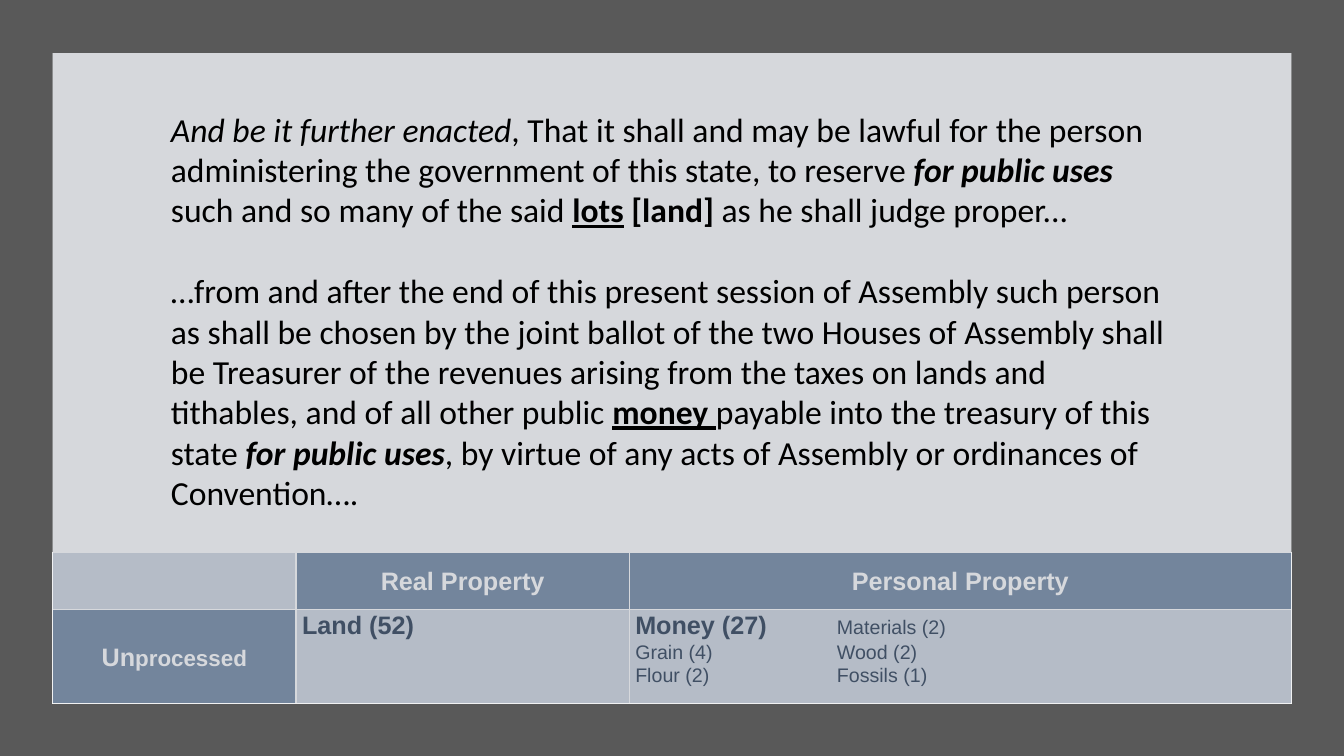
"""Build a slide with two quoted statutes above a table of property types."""
from lxml import etree
from pptx import Presentation
from pptx.dml.color import RGBColor
from pptx.enum.shapes import MSO_SHAPE
from pptx.enum.text import MSO_ANCHOR, MSO_AUTO_SIZE, PP_ALIGN
from pptx.oxml import parse_xml
from pptx.oxml.ns import qn
from pptx.util import Pt

RECTANGLE = MSO_SHAPE.RECTANGLE
MIDDLE, TOP = MSO_ANCHOR.MIDDLE, MSO_ANCHOR.TOP
CENTER, LEFT = PP_ALIGN.CENTER, PP_ALIGN.LEFT
FIT_SHAPE = MSO_AUTO_SIZE.SHAPE_TO_FIT_TEXT

NAMESPACE = "http://schemas.openxmlformats.org/drawingml/2006/main"
WHITE, GRAY, BLUE, PALE, NAVY = "FFFFFF", "595959", "8497B0", "D6DCE5", "44546A"
PANEL = (37.5, 38, 885, 464.5)


def paint(fill, color):
    fill.solid()
    fill.fore_color.rgb = RGBColor.from_string(color)


def add_span(para, text, size=24, font="Calibri", color="000000",
             bold=False, italic=False, underline=False):
    span = para.add_run()
    span.text = text
    span.font.size = Pt(size)
    span.font.name = font
    span.font.bold = bold
    span.font.italic = italic
    span.font.underline = underline
    span.font.color.rgb = RGBColor.from_string(color)


deck = Presentation()
deck.slide_width, deck.slide_height = Pt(960), Pt(540)
page = deck.slides.add_slide(deck.slide_layouts[6])
paint(page.background.fill, "F2F2F2")

for bounds, color in (((0, 0, 960, 540), GRAY), (PANEL, WHITE)):
    box = page.shapes.add_shape(RECTANGLE, *map(Pt, bounds))
    box.shadow.inherit = False
    box.line.fill.background()
    paint(box.fill, color)

column_widths, row_heights = (174, 238, 473), (41, 67)
frame = page.shapes.add_table(2, 3, Pt(37.5), Pt(394.5), Pt(885), Pt(108))
table = frame.table
for column, width in zip(table.columns, column_widths):
    column.width = Pt(width)
for row, height in zip(table.rows, row_heights):
    row.height = Pt(height)

header = {"size": 18, "font": "Arial", "color": WHITE, "bold": True}
leading = {**header, "color": NAVY}
minor = {**leading, "size": 14, "bold": False}
cells = [
    [[],
     [[("Real Property", header)]],
     [[("Personal Property", header)]]],
    [[[("Un", header), ("processed", {**header, "size": 16})]],
     [[("Land (52)", leading)]],
     [[("Money (27)", leading), ("\tMaterials (2)", minor)],
      [("Grain (4)\tWood (2)", minor)],
      [("Flour (2)\tFossils (1)", minor)]]],
]
for row_index, row in enumerate(cells):
    for column_index, lines in enumerate(row):
        cell = table.cell(row_index, column_index)
        is_header = (row_index == 0) != (column_index == 0)
        paint(cell.fill, BLUE if is_header else PALE)
        cell.vertical_anchor = MIDDLE if is_header else TOP
        cell.margin_left = cell.margin_right = Pt(4.3)
        cell.margin_top = cell.margin_bottom = 0
        for position, side in enumerate(("lnL", "lnR", "lnT", "lnB")):
            border = parse_xml(
                f'<a:{side} xmlns:a="{NAMESPACE}" w="{Pt(1)}"><a:solidFill>'
                f'<a:srgbClr val="{WHITE}"/></a:solidFill></a:{side}>')
            cell.fill._xPr.insert(position, border)
        for line_index, spans in enumerate(lines):
            frame = cell.text_frame
            para = frame.add_paragraph() if line_index else frame.paragraphs[0]
            para.alignment = CENTER if is_header else LEFT
            para.line_spacing = 1.07
            for text, style in spans:
                add_span(para, text, **style)
            if len(lines) > 1:
                tabs = etree.SubElement(para._p.get_or_add_pPr(), qn("a:tabLst"))
                etree.SubElement(tabs, qn("a:tab"), pos=str(Pt(144)), algn="l")

veil = page.shapes.add_shape(RECTANGLE, *map(Pt, PANEL))
veil.shadow.inherit = False
veil.line.fill.background()
paint(veil.fill, "333F50")
veil_color = veil.fill._xPr.find(qn("a:solidFill"))[0]
etree.SubElement(veil_color, qn("a:alpha"), val="20000")

strong = {"bold": True, "italic": True}
key_word = {"bold": True, "underline": True}
statutes = [
    [("And be it further enacted", {"italic": True}),
     (", That it shall and may be lawful for the person administering the "
      "government of this state, to reserve ", {}),
     ("for public uses ", strong),
     ("such and so many of the said ", {}),
     ("lots", key_word),
     (" [land]", {"bold": True}),
     (" as he shall judge proper...", {})],
    [("…from and after the end of this present session of Assembly such person "
      "as shall be chosen by the joint ballot of the two Houses of Assembly "
      "shall be Treasurer of the revenues arising from the taxes on lands and "
      "tithables, and of all other public ", {}),
     ("money ", key_word),
     ("payable into the treasury of this state ", {}),
     ("for public uses", strong),
     (", by virtue of any acts of Assembly or ordinances of Convention….", {})],
]
quote = page.shapes.add_textbox(Pt(115), Pt(74), Pt(729.5), Pt(298))
quote.text_frame.word_wrap = True
quote.text_frame.auto_size = FIT_SHAPE
for index, spans in enumerate(statutes):
    frame = quote.text_frame
    para = frame.add_paragraph() if index else frame.paragraphs[0]
    para.space_before = Pt(29 * index)
    for text, style in spans:
        add_span(para, text, **style)

deck.save("out.pptx")
